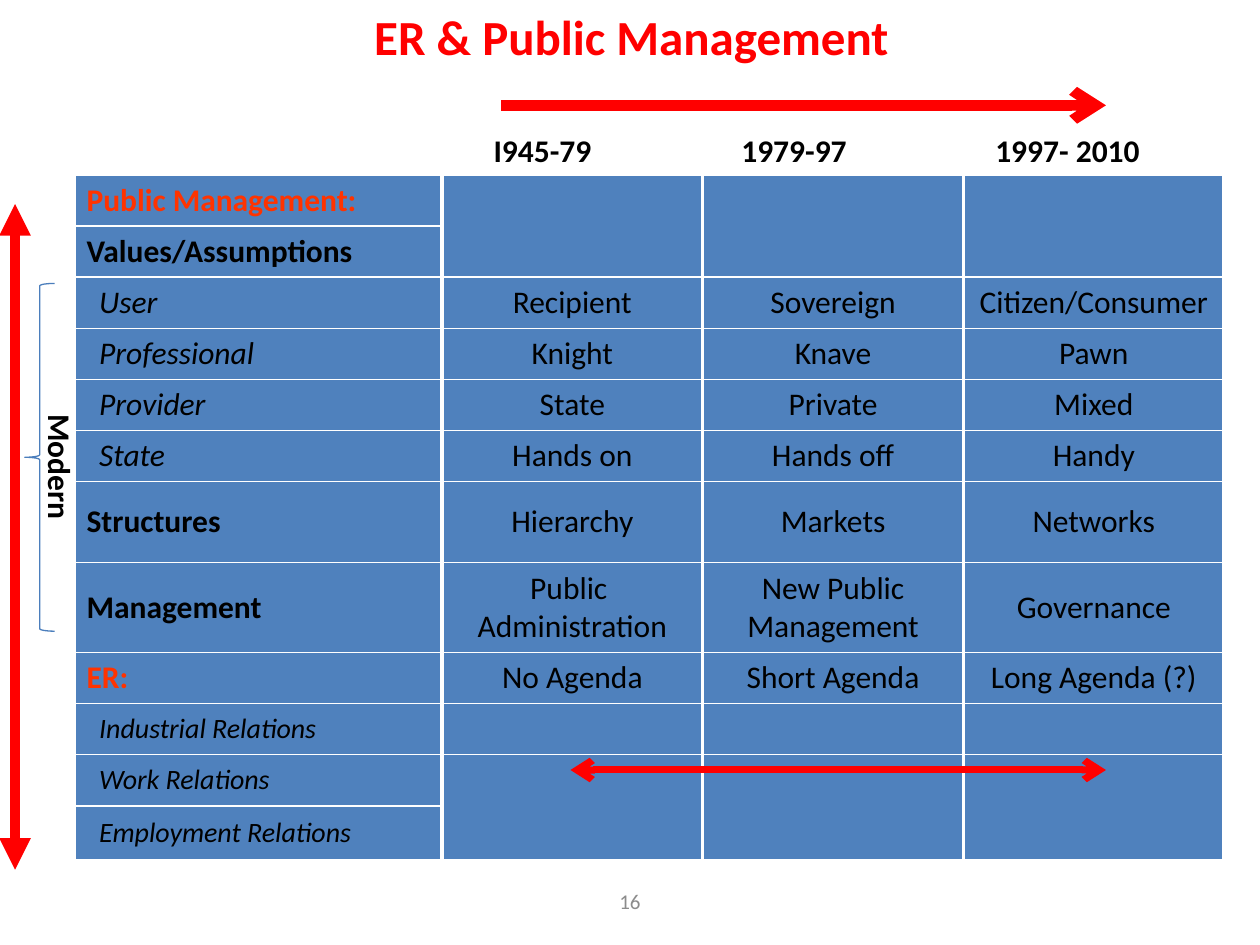
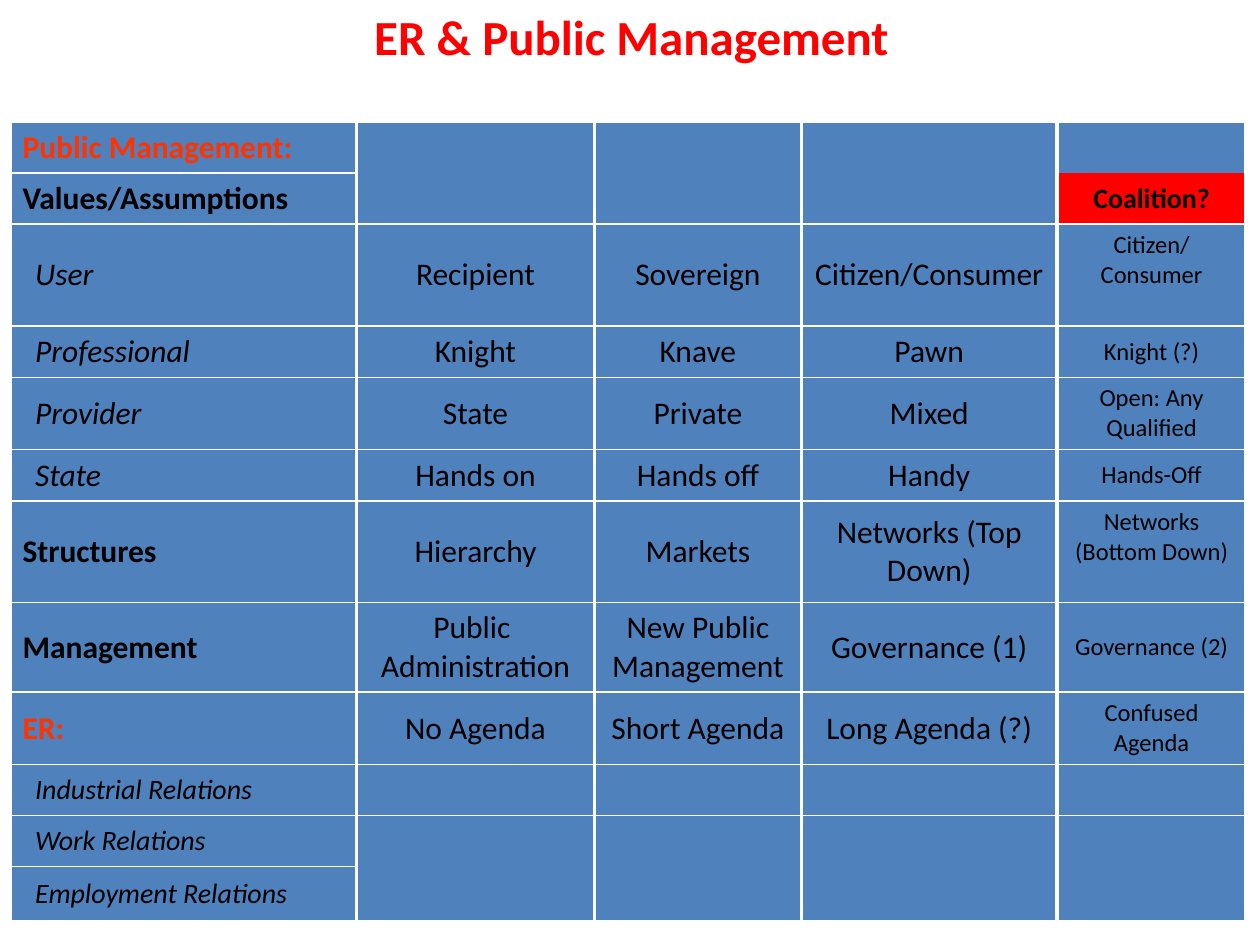
from lxml.etree import SubElement
from pptx import Presentation
from pptx.dml.color import RGBColor
from pptx.enum.shapes import MSO_CONNECTOR as Connector, MSO_SHAPE as Preset
from pptx.enum.text import MSO_ANCHOR as Anchor, PP_ALIGN as Align
from pptx.oxml.ns import qn
from pptx.util import Pt

FONT = "Calibri"
RED, ORANGE, BLACK, WHITE = "FF0000", "FF3300", "000000", "FFFFFF"
CELL_BLUE, BRACE_BLUE, GREY = "4F81BD", "4B7EBC", "8C8C8C"
PLAIN_TABLE_STYLE = "{2D5ABB26-0587-4C30-8999-92F81FD0307C}"
LABEL_COLUMNS = 2
OPEN_ROWS = (0, 9, 10)  # value cells here have no line below them

ROWS = [
    ("Public Management:", "section"),
    ("Values/Assumptions", "heading"),
    ("User", "item", "Recipient", "Sovereign", "Citizen/Consumer"),
    ("Professional", "item", "Knight", "Knave", "Pawn"),
    ("Provider", "item", "State", "Private", "Mixed"),
    ("State", "item", "Hands on", "Hands off", "Handy"),
    ("Structures", "heading", "Hierarchy", "Markets", "Networks"),
    ("Management", "heading", "Public \vAdministration", "New Public Management", "Governance"),
    ("ER:", "section", "No Agenda", "Short Agenda", "Long Agenda (?)"),
    ("Industrial Relations", "small item"),
    ("Work Relations", "small item"),
    ("Employment Relations", "small item"),
]
LABEL_STYLES = {
    "section": dict(color=ORANGE, bold=True),
    "heading": dict(bold=True),
    "item": dict(italic=True, indent=7.2),
    "small item": dict(italic=True, indent=7.2, size=16),
}
LATE_VALUES = {"Structures": "Networks (Top Down)", "Management": "Governance (1)"}
COALITION = {
    "User": "Citizen/\nConsumer",
    "Professional": "Knight (?)",
    "Provider": "Open: Any Qualified",
    "State": "Hands-Off",
    "Structures": "Networks (Bottom Down)",
    "Management": "Governance (2)",
    "ER:": "Confused Agenda",
}


def rgb(hex_color):
    return RGBColor.from_string(hex_color)


def format_text(text_frame, size=18, color=BLACK, bold=False, italic=False, align=None, indent=0):
    for paragraph in text_frame.paragraphs:
        paragraph.alignment = align
        if indent:
            paragraph._p.get_or_add_pPr().set("marL", str(Pt(indent)))
        for run in paragraph.runs:
            font = run.font
            font.name, font.size, font.bold, font.italic = FONT, Pt(size), bold, italic
            font.color.rgb = rgb(color)


def add_border(cell, side, width):
    line = SubElement(cell._tc.get_or_add_tcPr(), qn(f"a:ln{side}"), w=str(Pt(width)))
    SubElement(SubElement(line, qn("a:solidFill")), qn("a:srgbClr"), val=WHITE)


class Deck:
    def __init__(self):
        self.presentation = Presentation()
        self.presentation.slide_width, self.presentation.slide_height = Pt(720), Pt(540)
        self.slide = None

    def new_slide(self, title):
        self.slide = self.presentation.slides.add_slide(self.presentation.slide_layouts[5])
        shape = self.slide.shapes.title
        shape.left, shape.top, shape.width, shape.height = Pt(36.7), Pt(-24.5), Pt(648), Pt(90)
        shape.text_frame.text = title
        shape.text_frame.vertical_anchor = Anchor.MIDDLE
        format_text(shape.text_frame, 28, RED, bold=True, align=Align.CENTER)

    def text(self, text, left, top, width, height, rotation=0, tabs=(), anchor=Anchor.TOP, **style):
        shape = self.slide.shapes.add_textbox(Pt(left), Pt(top), Pt(width), Pt(height))
        shape.rotation = rotation
        frame = shape.text_frame
        frame.word_wrap = True
        frame.vertical_anchor = anchor
        frame.text = text
        format_text(frame, **style)
        if tabs:
            tab_list = SubElement(frame.paragraphs[0]._p.get_or_add_pPr(), qn("a:tabLst"))
            for position in tabs:
                SubElement(tab_list, qn("a:tab"), pos=str(Pt(position)), algn="l")

    def arrow(self, x1, y1, x2, y2, width, tail, head=None):
        connector = self.slide.shapes.add_connector(Connector.STRAIGHT, Pt(x1), Pt(y1), Pt(x2), Pt(y2))
        connector.line.width = Pt(width)
        connector.line.color.rgb = rgb(RED)
        line = connector.line._get_or_add_ln()
        for end, kind in (("headEnd", head), ("tailEnd", tail)):
            if kind:
                SubElement(line, qn(f"a:{end}"), type=kind)
        SubElement(connector._element.spPr, qn("a:effectLst"))

    def brace(self, left, top, width, height):
        shape = self.slide.shapes.add_shape(Preset.LEFT_BRACE, Pt(left), Pt(top), Pt(width), Pt(height))
        shape.shadow.inherit = False
        shape.fill.background()
        shape.line.color.rgb = rgb(BRACE_BLUE)
        shape.line.width = Pt(0.75)

    def table(self, left, top, widths, heights):
        """Add an empty table; its first two columns together hold the row labels."""
        shape = self.slide.shapes.add_table(
            len(heights), len(widths), Pt(left), Pt(top), Pt(sum(widths)), Pt(sum(heights)))
        table = shape.table
        table.first_row = table.horz_banding = False
        table._tbl.tblPr.find(qn("a:tableStyleId")).text = PLAIN_TABLE_STYLE
        for column, width in zip(table.columns, widths):
            column.width = Pt(width)
        for row_index, (row, height) in enumerate(zip(table.rows, heights)):
            row.height = Pt(height)
            for column_index, cell in enumerate(row.cells):
                is_label = column_index < LABEL_COLUMNS
                if column_index != 1:
                    add_border(cell, "L", 2.25)
                if column_index != 0:
                    add_border(cell, "R", 2.25)
                if is_label or row_index - 1 not in OPEN_ROWS:
                    add_border(cell, "T", 1)
                if is_label or row_index not in OPEN_ROWS:
                    add_border(cell, "B", 1)
                self.fill_cell(cell, CELL_BLUE)
                cell.vertical_anchor = Anchor.MIDDLE
        return table

    def fill_cell(self, cell, color):
        cell.fill.solid()
        cell.fill.fore_color.rgb = rgb(color)

    def cell_text(self, cell, text, **style):
        cell.text_frame.text = text
        format_text(cell.text_frame, **style)

    def management_table(self, left, top, widths, heights, late_values):
        """Fill the shared rows; late_values replaces entries of the third period."""
        table = self.table(left, top, widths, heights)
        for row_index, (label, kind, *values) in enumerate(ROWS):
            self.cell_text(table.cell(row_index, 0), label, **LABEL_STYLES[kind])
            if values and label in late_values:
                values[-1] = late_values[label]
            for column_index, value in enumerate(values, LABEL_COLUMNS):
                self.cell_text(table.cell(row_index, column_index), value, align=Align.CENTER)
        return table


def build_periods_slide(deck):
    deck.new_slide("ER & Public Management")
    heights = [29.2] * 6 + [46.3, 51.4] + [29.2] * 3 + [30.9]
    deck.management_table(42.3, 100, [193, 17.3] + [149] * 3, heights, {})
    deck.arrow(326, 440, 632, 440, 4, tail="arrow", head="arrow")
    deck.arrow(8.6, 116.6, 8.6, 497, 6, tail="triangle", head="triangle")
    deck.arrow(286.5, 60.2, 632, 60.2, 6, tail="arrow")
    deck.text("I945-79\t1979-97\t1997- 2010", 275, 71.5, 390, 29, tabs=(141.6, 286.7), bold=True)
    deck.brace(14.2, 162, 17, 198.7)
    deck.text("Modern", -3, 252.5, 75, 29, rotation=90, bold=True)
    deck.text("16", 246, 500.5, 228, 28.8, anchor=Anchor.MIDDLE, size=12, color=GREY, align=Align.CENTER)


def build_coalition_slide(deck):
    deck.new_slide("ER & Public Management")
    widths = [180, 18, 136.1, 118.1, 146.2, 108]
    heights = [29.2, 29.2, 58.3, 29.2, 41.1, 29.4, 57.9, 51.4, 41.1, 29.2, 29.2, 31.2]
    table = deck.management_table(5.7, 69.7, widths, heights, LATE_VALUES)
    last_column = len(widths) - 1
    heading = table.cell(1, last_column)
    deck.fill_cell(heading, RED)
    deck.cell_text(heading, "Coalition?", size=16, bold=True, align=Align.CENTER)
    for row_index, (label, *_) in enumerate(ROWS):
        if label in COALITION:
            cell = table.cell(row_index, last_column)
            deck.cell_text(cell, COALITION[label], size=14, align=Align.CENTER)
            if label in ("User", "Structures"):
                cell.vertical_anchor = Anchor.TOP


def main():
    deck = Deck()
    build_periods_slide(deck)
    build_coalition_slide(deck)
    deck.presentation.save("out.pptx")


if __name__ == "__main__":
    main()
